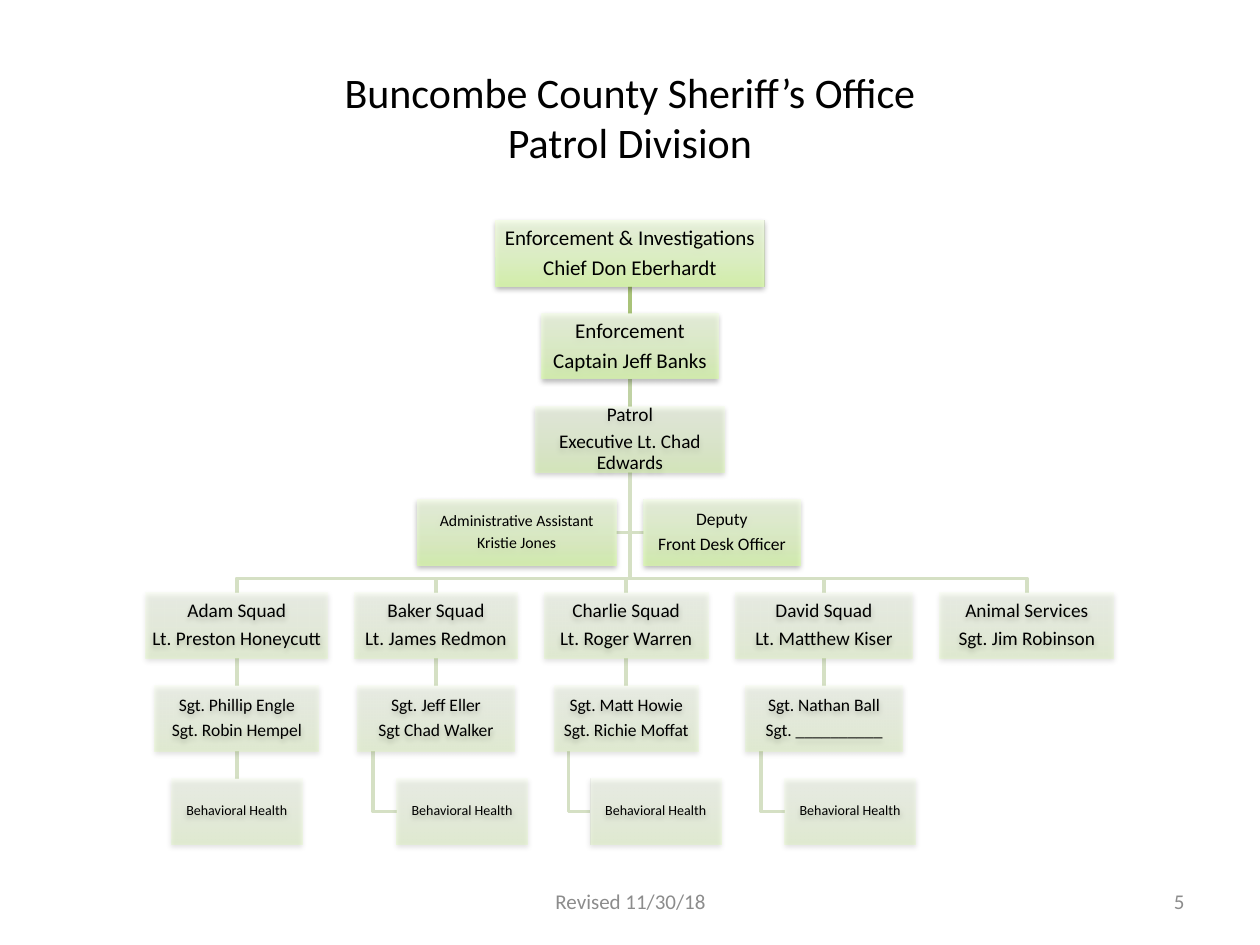
import dataclasses

import pptx
import pptx.dml.color
import pptx.enum.shapes
import pptx.enum.text
import pptx.oxml
import pptx.oxml.ns
import pptx.util

Inches = pptx.util.Inches
Align = pptx.enum.text.PP_ALIGN


@dataclasses.dataclass(frozen=True)
class Theme:
    font: str = "Calibri"
    text: str = "000000"
    footer: str = "8C8C8C"
    shadow: str = "000000"
    gradient: tuple = ((0, "DAFDA7"), (35, "E4FCC2"), (100, "F5FFE7"))
    chief_line: str = "A9C379"
    captain_line: str = "C0D2A4"
    branch_line: str = "D5E0C4"
    line_width: float = 2
    title_size: int = 24
    leader_size: int = 12
    squad_size: int = 11
    sergeant_size: int = 10
    assistant_size: int = 9
    health_size: int = 8
    footer_size: int = 12


class OrgChart:
    box_height = 0.52
    first_top = 1.75
    row_step = (6.18 - 1.75) / 6

    def __init__(self, slide, theme):
        self.slide = slide
        self.theme = theme

    def top(self, row):
        return self.first_top + row * self.row_step

    def bottom(self, row):
        return self.top(row) + self.box_height

    def middle(self, row):
        return self.top(row) + self.box_height / 2

    def style(self, paragraph, size, color, alignment):
        paragraph.alignment = alignment
        paragraph.font.name = self.theme.font
        paragraph.font.size = pptx.util.Pt(size)
        paragraph.font.color.rgb = pptx.dml.color.RGBColor.from_string(color)

    def text(self, content, left, top, width, height, size, color, alignment=Align.CENTER):
        shape = self.slide.shapes.add_textbox(*map(Inches, (left, top, width, height)))
        frame = shape.text_frame
        frame.word_wrap = True
        frame.vertical_anchor = pptx.enum.text.MSO_ANCHOR.MIDDLE
        paragraph = frame.paragraphs[0]
        paragraph.text = content
        self.style(paragraph, size, color, alignment)

    def box(self, lines, left, row, width, size, opacity):
        shape = self.slide.shapes.add_shape(
            pptx.enum.shapes.MSO_SHAPE.RECTANGLE,
            *map(Inches, (left, self.top(row), width, self.box_height)))
        self.decorate(shape, opacity)
        frame = shape.text_frame
        frame.word_wrap = True
        frame.vertical_anchor = pptx.enum.text.MSO_ANCHOR.MIDDLE
        frame.margin_left = frame.margin_right = Inches(0.01)
        frame.margin_top = frame.margin_bottom = Inches(0.01)
        for index, line in enumerate(lines):
            paragraph = frame.add_paragraph() if index else frame.paragraphs[0]
            paragraph.text = line
            paragraph.line_spacing = 0.9
            paragraph.space_after = pptx.util.Pt(0.35 * size)
            self.style(paragraph, size, self.theme.text, Align.CENTER)

    def decorate(self, shape, opacity):
        namespace = pptx.oxml.ns.nsdecls("a")
        stops = "".join(
            f'<a:gs pos="{position * 1000}"><a:srgbClr val="{color}">'
            f'<a:alpha val="{opacity * 1000}"/></a:srgbClr></a:gs>'
            for position, color in self.theme.gradient)
        properties = shape.element.spPr
        properties.insert(2, pptx.oxml.parse_xml(
            f'<a:gradFill {namespace} rotWithShape="1"><a:gsLst>{stops}</a:gsLst>'
            '<a:lin ang="16200000" scaled="1"/></a:gradFill>'))
        shape.line.fill.background()
        properties.append(pptx.oxml.parse_xml(
            f'<a:effectLst {namespace}><a:outerShdw blurRad="40000" dist="20000" '
            f'dir="5400000" rotWithShape="0"><a:srgbClr val="{self.theme.shadow}">'
            '<a:alpha val="38000"/></a:srgbClr></a:outerShdw></a:effectLst>'))

    def stroke(self, shape, color):
        shape.line.color.rgb = pptx.dml.color.RGBColor.from_string(color)
        shape.line.width = pptx.util.Pt(self.theme.line_width)

    def drop(self, center, row, color):
        connector = self.slide.shapes.add_connector(
            pptx.enum.shapes.MSO_CONNECTOR.STRAIGHT,
            *map(Inches, (center, self.bottom(row), center, self.top(row + 1))))
        self.stroke(connector, color)
        connector.element.spPr.append(pptx.oxml.parse_xml(
            f'<a:effectLst {pptx.oxml.ns.nsdecls("a")}/>'))

    def elbow(self, points, color):
        start, *rest = [(Inches(x), Inches(y)) for x, y in points]
        builder = self.slide.shapes.build_freeform(*start)
        builder.add_line_segments(rest, close=False)
        shape = builder.convert_to_shape()
        shape.shadow.inherit = False
        shape.fill.background()
        self.stroke(shape, color)


CENTER = 5
BUS_TOP = 4.59
HEALTH_WIDTH = 1.04

LEADERS = [
    (("Enforcement & Investigations", "Chief Don Eberhardt"), 2.13, 80, Theme.leader_size),
    (("Enforcement", "Captain Jeff Banks"), 1.4, 70, Theme.leader_size),
    (("Patrol", "Executive Lt. Chad Edwards"), 1.5, 50, Theme.squad_size),
]
STAFF = [
    (("Administrative Assistant", "Kristie Jones"), 3.31, 1.58, 4.89, Theme.assistant_size),
    (("Deputy", "Front Desk Officer"), 5.11, 1.24, 5.11, Theme.sergeant_size),
]
SQUADS = [
    (1.88, 1.44, ("Adam Squad", "Lt. Preston Honeycutt"),
     1.3, ("Sgt. Phillip Engle", "Sgt. Robin Hempel")),
    (3.46, 1.29, ("Baker Squad", "Lt. James Redmon"),
     1.25, ("Sgt. Jeff Eller", "Sgt Chad Walker")),
    (4.97, 1.3, ("Charlie Squad", "Lt. Roger Warren"),
     1.14, ("Sgt. Matt Howie", "Sgt. Richie Moffat")),
    (6.54, 1.41, ("David Squad", "Lt. Matthew Kiser"),
     1.25, ("Sgt. Nathan Ball", "Sgt. __________")),
    (8.15, 1.38, ("Animal Services", "Sgt. Jim Robinson"), 0, ()),
]


def health_left(index, center, width):
    if index == 0:
        return center - HEALTH_WIDTH / 2
    return center - width / 2 + width / 4


def draw_lines(chart, theme):
    trunk = (CENTER, chart.bottom(2))
    for _, _, _, edge, _ in STAFF:
        chart.elbow([trunk, (CENTER, chart.middle(3)), (edge, chart.middle(3))],
                    theme.branch_line)
    for index, (center, _, _, width, sergeants) in enumerate(SQUADS):
        chart.elbow([trunk, (CENTER, BUS_TOP), (center, BUS_TOP), (center, chart.top(4))],
                    theme.branch_line)
        if not sergeants:
            continue
        chart.drop(center, 4, theme.branch_line)
        if index == 0:
            chart.drop(center, 5, theme.branch_line)
        else:
            stem = center - width / 2 + width / 10
            chart.elbow([(stem, chart.bottom(5)), (stem, chart.middle(6)),
                         (health_left(index, center, width), chart.middle(6))],
                        theme.branch_line)
    chart.drop(CENTER, 1, theme.captain_line)
    chart.drop(CENTER, 0, theme.chief_line)


def draw_boxes(chart, theme):
    for row, (lines, width, opacity, size) in enumerate(LEADERS):
        chart.box(lines, CENTER - width / 2, row, width, size, opacity)
    for index, (center, width, squad, sergeant_width, sergeants) in enumerate(SQUADS):
        chart.box(squad, center - width / 2, 4, width, theme.squad_size, 30)
        if sergeants:
            chart.box(sergeants, center - sergeant_width / 2, 5, sergeant_width,
                      theme.sergeant_size, 30)
            chart.box(["Behavioral Health"], health_left(index, center, sergeant_width), 6,
                      HEALTH_WIDTH, theme.health_size, 30)
    for lines, left, width, _, size in STAFF:
        chart.box(lines, left, 3, width, size, 70)


def main():
    theme = Theme()
    presentation = pptx.Presentation()
    presentation.slide_width = Inches(10)
    presentation.slide_height = Inches(7.5)
    chart = OrgChart(presentation.slides.add_slide(presentation.slide_layouts[6]), theme)
    chart.text("Buncombe County Sheriff’s Office\vPatrol Division",
               0.5, 0.3, 9, 1.25, theme.title_size, theme.text)
    draw_lines(chart, theme)
    draw_boxes(chart, theme)
    chart.text("Revised 11/30/18", 3.42, 6.95, 3.17, 0.4, theme.footer_size, theme.footer)
    chart.text("5", 7.17, 6.95, 2.33, 0.4, theme.footer_size, theme.footer, Align.RIGHT)
    presentation.save("out.pptx")


if __name__ == "__main__":
    main()
